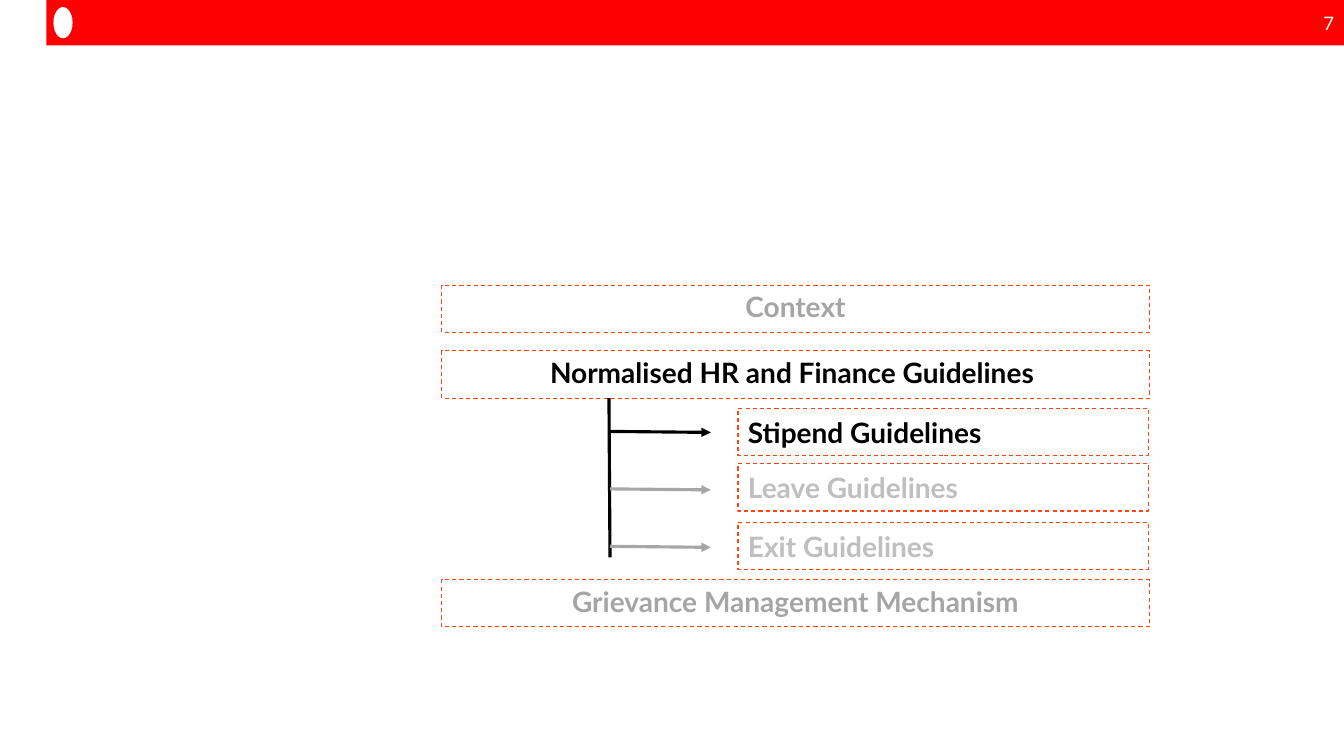
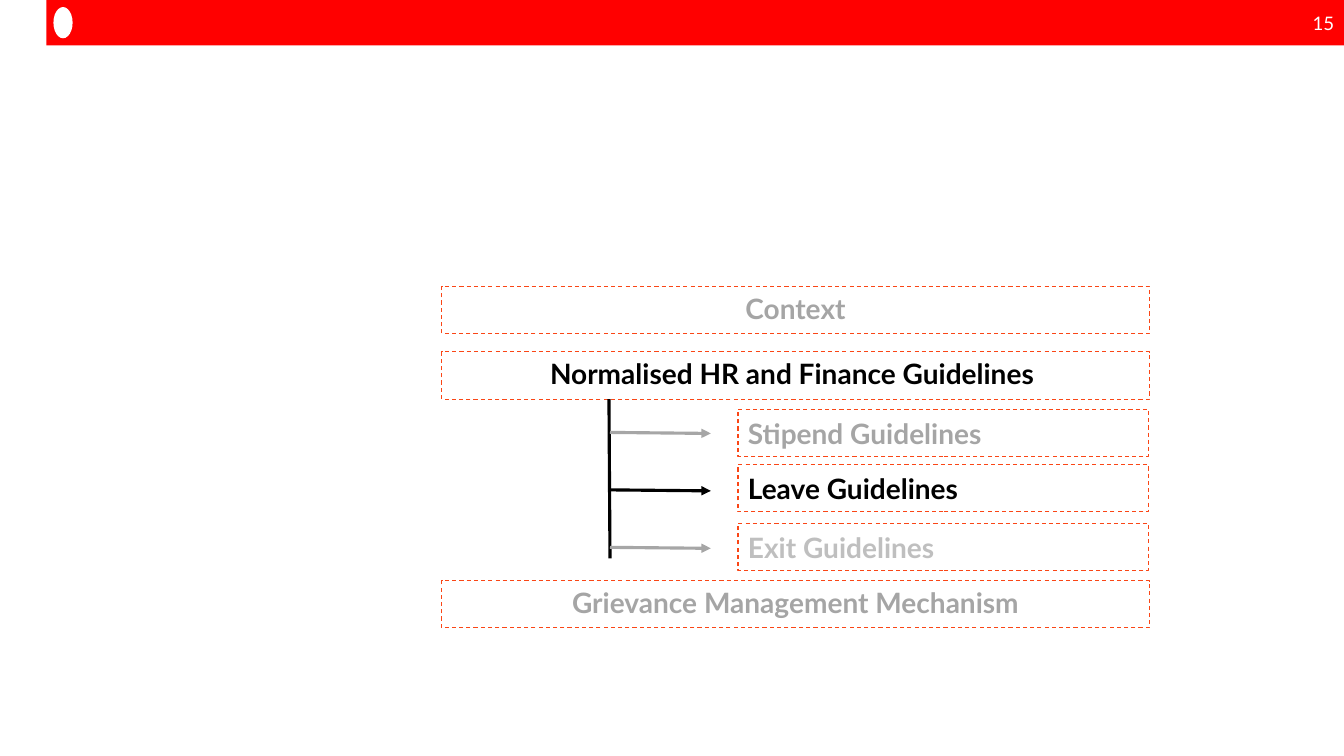
from pptx import Presentation
from pptx.dml.color import RGBColor
from pptx.enum.dml import MSO_LINE
from pptx.enum.shapes import MSO_CONNECTOR, MSO_SHAPE
from pptx.enum.text import MSO_ANCHOR, PP_ALIGN
from pptx.oxml.ns import qn
from pptx.util import Inches, Pt
from lxml import etree

# Shared style
FONT = "Lato"
RED, ORANGE, WHITE, BLACK = "FF0000", "FA4616", "FFFFFF", "000000"
GREY, PALE, ARROW_GREY = "A5A5A5", "BFBFBF", "A6A6A6"
BOX_H = 0.47
ARROW_TOP, ARROW_STEP = 4.28, 0.57

# Main topics: text, top, colour
TOPICS = [
    ("Context", 2.83, GREY),
    ("Normalised HR and Finance Guidelines ", 3.48, BLACK),
    ("Grievance Management Mechanism", 5.75, GREY),
]
# Subtopics: text, top
SUBTOPICS = [
    ("Stipend Guidelines", 4.05),
    ("Leave Guidelines", 4.6),
    ("Exit Guidelines", 5.18),
]
# Slides: page number, vertical shift, subtopic text colours
SLIDES = [
    ("7", 0, [BLACK, PALE, PALE]),
    ("15", 0.01, [GREY, BLACK, PALE]),
]


def rgb(value):
    return RGBColor.from_string(value)


def add_line(s, x1, y1, x2, y2, color, arrow=False):
    line = s.shapes.add_connector(MSO_CONNECTOR.STRAIGHT, Inches(x1), Inches(y1),
                                  Inches(x2), Inches(y2))
    line.line.color.rgb = rgb(color)
    line.line.width = Pt(2.25)
    if arrow:
        ln = line.line._get_or_add_ln()
        etree.SubElement(ln, qn("a:tailEnd"), type="triangle")
    etree.SubElement(line._element.spPr, qn("a:effectLst"))


prs = Presentation()
prs.slide_width, prs.slide_height = Inches(13.33), Inches(7.5)

for number, shift, colors in SLIDES:
    s = prs.slides.add_slide(prs.slide_layouts[6])

    # Top band with a plain emblem
    for kind, x, y, w, h, color in [
        (MSO_SHAPE.RECTANGLE, 0.46, 0, 12.87, 0.45, RED),
        (MSO_SHAPE.OVAL, 0.53, 0.07, 0.19, 0.31, WHITE),
    ]:
        sp = s.shapes.add_shape(kind, Inches(x), Inches(y), Inches(w), Inches(h))
        sp.shadow.inherit = False
        sp.fill.solid()
        sp.fill.fore_color.rgb = rgb(color)
        sp.line.fill.background()

    # Page number
    tf = s.shapes.add_textbox(Inches(12.84), Inches(0.06), Inches(0.49), Inches(0.33)).text_frame
    tf.word_wrap = True
    tf.vertical_anchor = MSO_ANCHOR.MIDDLE
    p = tf.paragraphs[0]
    p.text = number
    p.alignment = PP_ALIGN.RIGHT
    p.font.name, p.font.size = FONT, Pt(13.3)
    p.font.color.rgb = rgb(WHITE)

    # Agenda boxes: wide and centred for topics, narrow and left for subtopics
    boxes = [(text, 4.38, top, 7.02, color, PP_ALIGN.CENTER) for text, top, color in TOPICS]
    boxes += [(text, 7.32, top, 4.07, color, PP_ALIGN.LEFT)
              for (text, top), color in zip(SUBTOPICS, colors)]
    for text, x, top, w, color, align in boxes:
        sp = s.shapes.add_shape(MSO_SHAPE.RECTANGLE, Inches(x), Inches(top + shift),
                                Inches(w), Inches(BOX_H))
        sp.shadow.inherit = False
        sp.fill.background()
        sp.line.color.rgb = rgb(ORANGE)
        sp.line.width = Pt(0.75)
        sp.line.dash_style = MSO_LINE.DASH
        tf = sp.text_frame
        tf.vertical_anchor = MSO_ANCHOR.MIDDLE
        p = tf.paragraphs[0]
        p.text = text
        p.alignment = align
        if align == PP_ALIGN.CENTER:
            p.line_spacing = 0.9
        p.font.name, p.font.size, p.font.bold = FONT, Pt(20), True
        p.font.color.rgb = rgb(color)

    # Trunk and one arrow per subtopic
    add_line(s, 6.04, 3.95 + shift, 6.05, 5.53 + shift, BLACK)
    for i, color in enumerate(colors):
        y = ARROW_TOP + i * ARROW_STEP + shift
        add_line(s, 6.05, y, 7.05, y + 0.01, BLACK if color == BLACK else ARROW_GREY, arrow=True)

prs.save("out.pptx")
